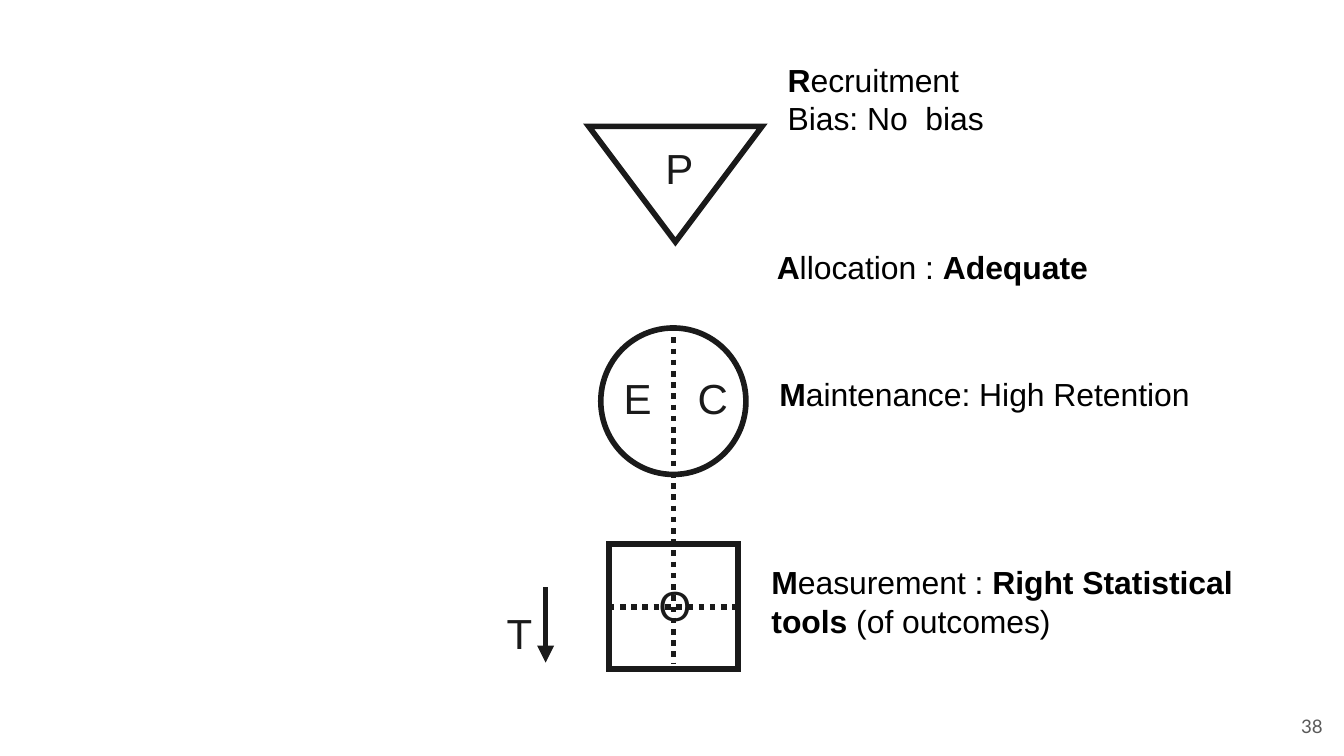
from pptx import Presentation
from pptx.dml.color import RGBColor
from pptx.enum.dml import MSO_LINE
from pptx.enum.shapes import MSO_CONNECTOR, MSO_SHAPE as SHAPE
from pptx.enum.text import MSO_ANCHOR, PP_ALIGN
from pptx.oxml.ns import qn
from pptx.util import Inches, Pt
from lxml.etree import SubElement

INK = "1A1A1A"


def color(value):
    return RGBColor.from_string(value)


def add_text(place, lines, size, ink, font="Arial", wrap=True, inset=(0.07, 0.04)):
    """Add a text box; each line is a list of (text, bold) runs."""
    box = slide.shapes.add_textbox(*map(Inches, place))
    frame = box.text_frame
    frame.word_wrap = wrap
    frame.margin_left = frame.margin_right = Inches(inset[0])
    frame.margin_top = frame.margin_bottom = Inches(inset[1])
    for index, line in enumerate(lines):
        para = frame.add_paragraph() if index else frame.paragraphs[0]
        para.font.size = Pt(size)
        para.font.name = font
        para.font.color.rgb = color(ink)
        for text, bold in line:
            span = para.add_run()
            span.text = text
            span.font.bold = bold
    return frame


deck = Presentation()
deck.slide_width = Inches(10)
deck.slide_height = Inches(10) * 9 // 16
slide = deck.slides.add_slide(deck.slide_layouts[6])

# Outlines: participants triangle, comparison circle, outcome square
outlines = {}
for name, kind, place, rotation in (
    ("comparison", SHAPE.OVAL, (4.47, 2.44, 1.08, 1.09), 0),
    ("outcome", SHAPE.RECTANGLE, (4.53, 4.05, 0.96, 0.93), 0),
    ("participants", SHAPE.ISOSCELES_TRIANGLE, (4.38, 0.94, 1.29, 0.86), 180),
):
    outline = slide.shapes.add_shape(kind, *map(Inches, place))
    outline.shadow.inherit = False
    outline.rotation = rotation
    outline.fill.background()
    outline.line.color.rgb = color(INK)
    outline.line.width = Pt(3)
    SubElement(outline.line._get_or_add_ln(), qn("a:miter"), lim="800000")
    outlines[name] = outline

# Dotted dividers and the time arrow
lines = {}
for name, ends, dotted in (
    ("group divider", (5.01, 2.51, 5.01, 4.94), True),
    ("outcome divider", (4.53, 4.51, 5.49, 4.51), True),
    ("time arrow", (4.06, 4.37, 4.06, 4.93), False),
):
    line = slide.shapes.add_connector(MSO_CONNECTOR.STRAIGHT, *map(Inches, ends))
    line.line.color.rgb = color(INK)
    line.line.width = Pt(3)
    if dotted:
        line.line.dash_style = MSO_LINE.ROUND_DOT
    lines[name] = line

lines["outcome divider"].begin_connect(outlines["outcome"], 1)
lines["outcome divider"].end_connect(outlines["outcome"], 3)
SubElement(lines["time arrow"].line._get_or_add_ln(), qn("a:tailEnd"), type="triangle")
for line in lines.values():
    SubElement(line._element.spPr, qn("a:effectLst"))

# Letters
for letter, left, top, width in (
    ("P", 4.88, 1.02, 0.35),
    ("O", 4.83, 4.27, 0.39),
    ("T", 3.7, 4.48, 0.33),
):
    add_text((left, top, width, 0.45), [[(letter, False)]], 22.5, INK, wrap=False)

# The two groups share one box, set apart by a tab stop
groups = add_text((4.57, 2.73, 0.93, 0.45), [[("E\tC", False)]], 22.5, INK)
tabs = SubElement(groups.paragraphs[0]._p.get_or_add_pPr(), qn("a:tabLst"))
SubElement(tabs, qn("a:tab"), pos=str(Inches(0.55)), algn="l")
tabs.getparent().insert(0, tabs)

# Stages of the study
for place, stage in (
    ((5.71, 1.8, 2.73, 0.65),
     [[("A", True), ("llocation : ", False), ("Adequate", True)]]),
    ((5.73, 2.75, 3.23, 0.93),
     [[("M", True), ("aintenance: High Retention", False)]]),
    ((5.67, 4.15, 3.76, 0.65),
     [[("M", True), ("easurement : ", False),
       ("Right Statistical tools ", True), ("(of outcomes)", False)]]),
    ((5.79, 0.41, 2.59, 0.65),
     [[("R", True), ("ecruitment", False)], [("Bias: No  bias", False)]]),
):
    add_text(place, stage, 17.1, "000000")

number = add_text((9.34, 5.19, 0.6, 0.43), [[("38", False)]], 10, "595959",
                  font="Lato", inset=(0.1, 0.1))
number.vertical_anchor = MSO_ANCHOR.MIDDLE
number.paragraphs[0].alignment = PP_ALIGN.RIGHT

deck.save("out.pptx")
